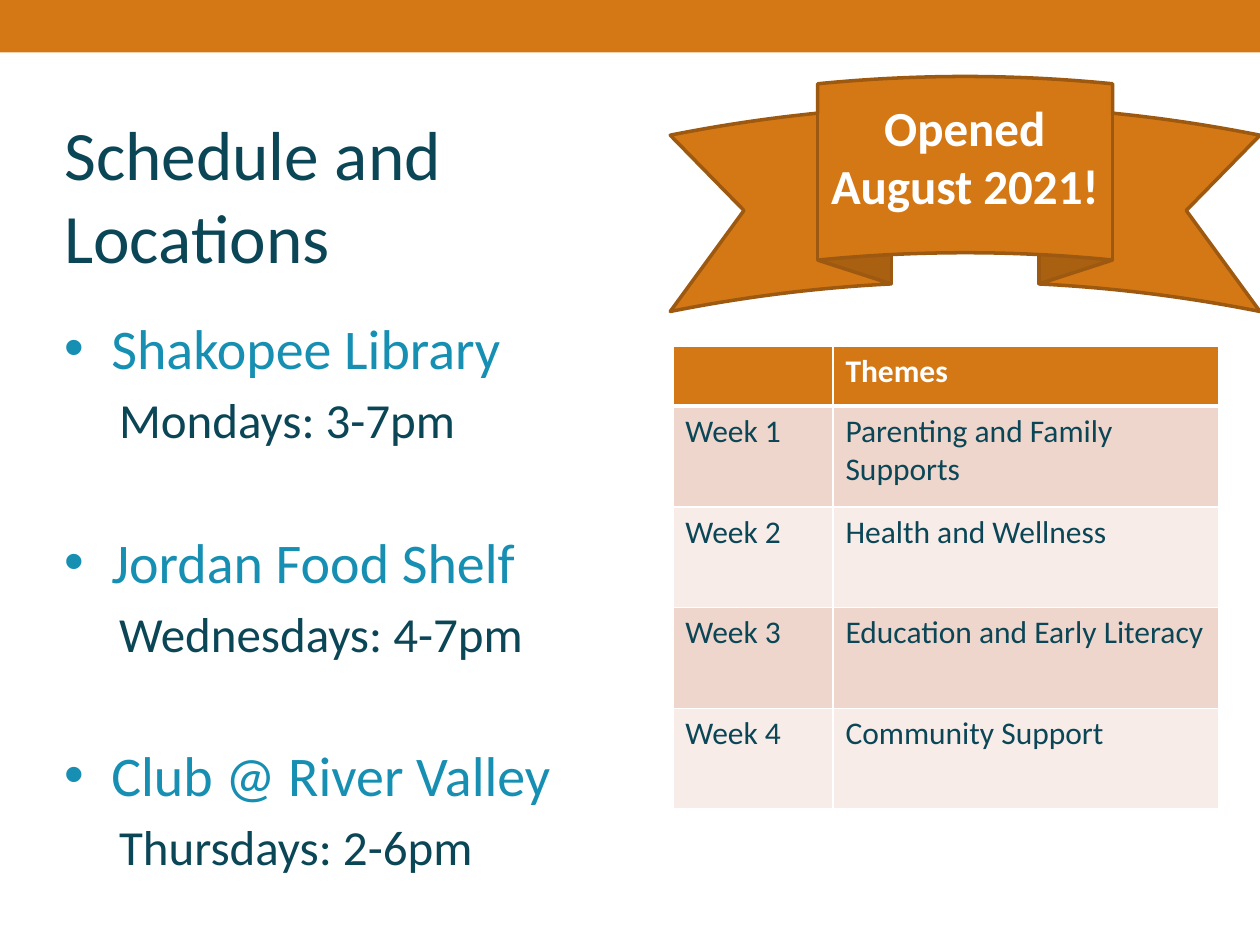
import pptx
import pptx.util
import pptx.dml.color
import pptx.enum.shapes
import pptx.enum.text
import pptx.oxml
import pptx.oxml.ns

Pt = pptx.util.Pt
Anchor = pptx.enum.text.MSO_ANCHOR
Align = pptx.enum.text.PP_ALIGN
Shape = pptx.enum.shapes.MSO_SHAPE

COLORS = {
    "orange": "D47816",
    "brown": "9D5910",
    "navy": "0B4657",
    "teal": "168FB2",
    "white": "FFFFFF",
    "rose": "EFD6CC",
    "blush": "F7ECE8",
}

LOCATIONS = [
    ("Shakopee Library", "Mondays: 3-7pm"),
    ("Jordan Food Shelf", "Wednesdays: 4-7pm"),
    ("Club @ River Valley", "Thursdays: 2-6pm"),
]

THEMES = [
    "Parenting and Family Supports",
    "Health and Wellness",
    "Education and Early Literacy",
    "Community Support",
]


def color(name):
    return pptx.dml.color.RGBColor.from_string(COLORS[name])


def apply(target, values):
    for key, value in values.items():
        setattr(target, key, value)


def style(paragraph, size, color_name, bold=False):
    apply(paragraph.font, {"name": "Calibri", "size": Pt(size), "bold": bold})
    paragraph.font.color.rgb = color(color_name)


def fill(target, color_name):
    target.fill.solid()
    target.fill.fore_color.rgb = color(color_name)


def add_block(page, preset, frame, line=None):
    block = page.shapes.add_shape(preset, *map(Pt, frame))
    block.shadow.inherit = False
    fill(block, "orange")
    if line:
        block.line.color.rgb = color(line)
        block.line.width = Pt(2)
    else:
        block.line.fill.background()


def add_box(page, frame):
    box = page.shapes.add_textbox(*map(Pt, frame))
    box.text_frame.word_wrap = True
    return box.text_frame


def add_paragraph(text_frame, index, text):
    para = text_frame.paragraphs[0] if index == 0 else text_frame.add_paragraph()
    para.text = text
    return para


def set_indent(paragraph, left, hanging=0, bullet=None):
    properties = paragraph._p.get_or_add_pPr()
    properties.set("marL", str(Pt(left)))
    properties.set("indent", str(-Pt(hanging)))
    if bullet:
        namespace = pptx.oxml.ns.nsdecls("a")
        for xml in (f'<a:buFont {namespace} typeface="Arial"/>',
                    f'<a:buChar {namespace} char="{bullet}"/>'):
            properties.append(pptx.oxml.parse_xml(xml))


def set_title(page):
    title = page.shapes.title
    apply(title, {"left": Pt(29.5), "top": Pt(72), "width": Pt(312), "height": Pt(90)})
    title.text_frame.text = "Schedule and\vLocations"
    apply(title.text_frame, {
        "word_wrap": True,
        "vertical_anchor": Anchor.BOTTOM,
        "auto_size": pptx.enum.text.MSO_AUTO_SIZE.NONE,
    })
    para = title.text_frame.paragraphs[0]
    para.alignment = Align.LEFT
    style(para, 39.6, "navy")


def add_locations(page):
    text_frame = add_box(page, (29.5, 175.7, 336, 356))
    for index, (place, hours) in enumerate(LOCATIONS):
        para = add_paragraph(text_frame, index, place)
        set_indent(para, 27, 27, "•")
        para.space_before = Pt(45 if index else 0)
        style(para, 32, "teal")
        para = text_frame.add_paragraph()
        para.text = hours
        para.level = 1
        set_indent(para, 31.5)
        para.space_before = Pt(5)
        style(para, 28, "navy")


def add_ribbon(page):
    add_block(page, Shape.CURVED_UP_RIBBON, (383, 43.7, 337, 178 - 43.7), "brown")
    text_frame = add_box(page, (445, 52, 212.5, 75))
    for index, text in enumerate(("Opened", "August 2021!")):
        para = add_paragraph(text_frame, index, text)
        para.alignment = Align.CENTER
        style(para, 28, "white", True)


def set_borders(cell, bottom):
    properties = cell._tc.get_or_add_tcPr()
    for side, width in (("L", 1), ("R", 1), ("T", 1), ("B", bottom)):
        properties.append(pptx.oxml.parse_xml(
            f'<a:ln{side} {pptx.oxml.ns.nsdecls("a")} w="{Pt(width)}"><a:solidFill>'
            f'<a:srgbClr val="{COLORS["white"]}"/></a:solidFill></a:ln{side}>'))


def add_themes(page):
    rows = [("", "Themes")]
    rows += [(f"Week {number}", theme) for number, theme in enumerate(THEMES, 1)]
    frame = map(Pt, (384.5, 198, 312, 264.4))
    table = page.shapes.add_table(len(rows), 2, *frame).table
    for column, width in zip(table.columns, (91.5, 220.5)):
        column.width = Pt(width)
    for index, texts in enumerate(rows):
        header = index == 0
        table.rows[index].height = Pt(34 if header else 57.6)
        background = "orange" if header else ("blush", "rose")[index % 2]
        for cell, text in zip(table.rows[index].cells, texts):
            set_borders(cell, 3 if header else 1)
            fill(cell, background)
            cell.text = text
            style(cell.text_frame.paragraphs[0], 18, "white" if header else "navy", header)


def main():
    deck = pptx.Presentation()
    apply(deck, {"slide_width": Pt(720), "slide_height": Pt(540)})
    page = deck.slides.add_slide(deck.slide_layouts[5])
    add_block(page, Shape.RECTANGLE, (0, 0, 720, 30))
    set_title(page)
    add_locations(page)
    add_themes(page)
    add_ribbon(page)
    deck.save("out.pptx")


if __name__ == "__main__":
    main()
